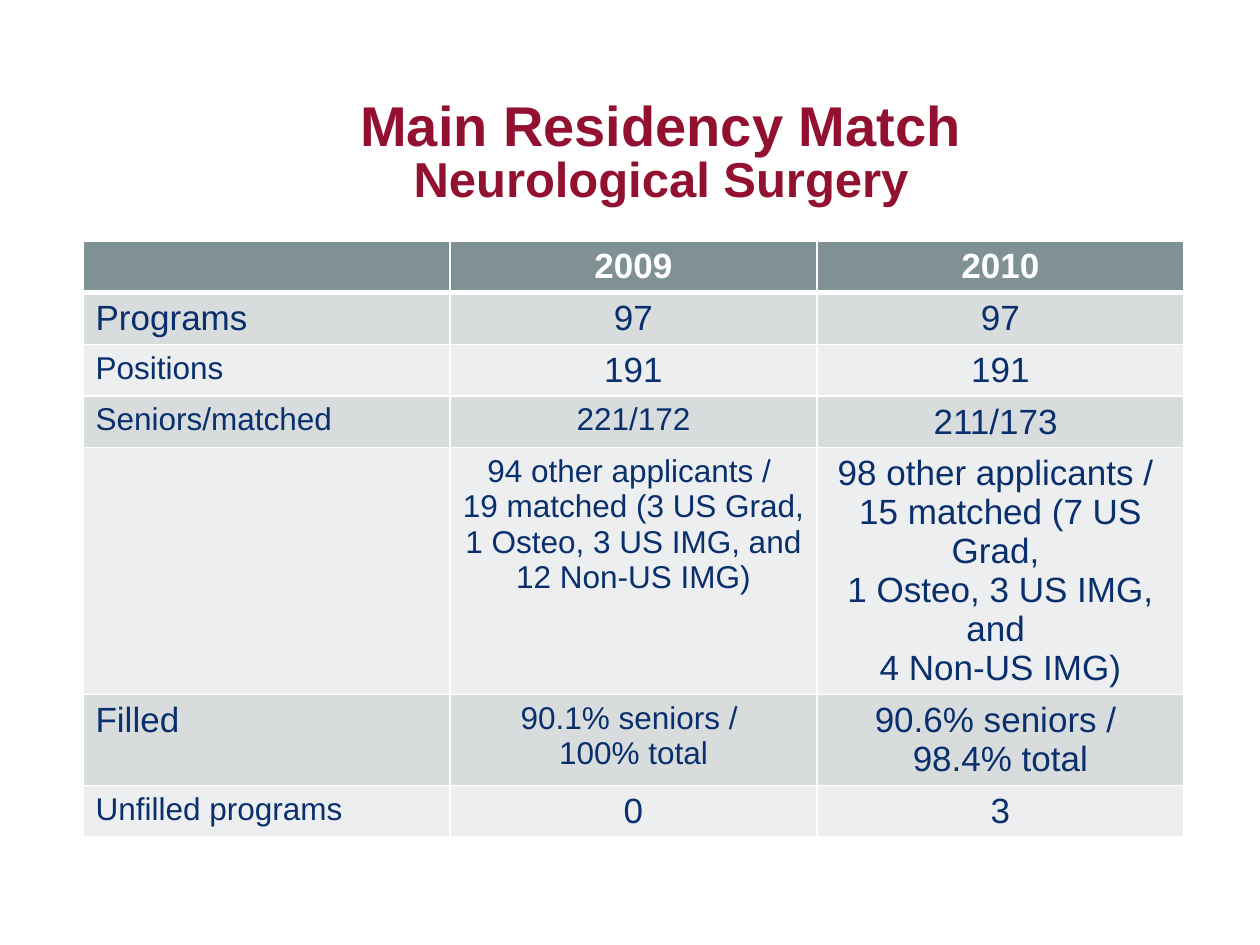
from pptx import Presentation
from pptx.dml.color import RGBColor
from pptx.enum.text import MSO_ANCHOR, MSO_AUTO_SIZE, PP_ALIGN
from pptx.oxml.ns import qn
from pptx.util import Pt
from lxml import etree

PX = 914400 // 126
LEFT, CENTER = PP_ALIGN.LEFT, PP_ALIGN.CENTER
BOTTOM, NO_FIT = MSO_ANCHOR.BOTTOM, MSO_AUTO_SIZE.NONE
FONT = "Arial"
TITLE_ONLY = 5

COLORS = {
    "title": "931130",
    "header": "809195",
    "band_dark": "D8DCDD",
    "band_light": "EDEEEF",
    "text": "092F6D",
    "white": "FFFFFF",
}

# Each cell is its text and its size in points.
ROWS = [
    [("", 20), ("2009", 20), ("2010", 20)],
    [("Programs", 20), ("97", 20), ("97", 20)],
    [("Positions", 18), ("191", 20), ("191", 20)],
    [("Seniors/matched", 18), ("221/172", 18), ("211/173 ", 20)],
    [("", 18),
     ("94 other applicants / \n19 matched (3 US Grad, \n"
      "1 Osteo, 3 US IMG, and 12 Non-US IMG)", 18),
     ("98 other applicants / \n15 matched (7 US Grad, \n"
      "1 Osteo, 3 US IMG, and \n4 Non-US IMG)", 20)],
    [("Filled", 20), ("90.1% seniors / \n100% total", 18),
     ("90.6% seniors / \n98.4% total", 20)],
    [("Unfilled programs", 18), ("0", 20), ("3", 20)],
]


def px(*values):
    return [v * PX for v in values]


def rgb(name):
    return RGBColor.from_string(COLORS[name])


def style_font(font, size, color, bold):
    font.name = FONT
    font.size = Pt(size)
    font.bold = bold
    font.color.rgb = rgb(color)


def add_title(s):
    title = s.shapes.title
    title.left, title.top, title.width, title.height = px(86, 82, 1150, 126)
    tf = title.text_frame
    tf.auto_size = NO_FIT
    tf.vertical_anchor = BOTTOM
    tf.margin_left = tf.margin_top = tf.margin_right = tf.margin_bottom = 0
    tf.text = "Main Residency Match\vNeurological Surgery"
    p = tf.paragraphs[0]
    p.alignment = CENTER
    p.line_spacing = 0.85
    for r, size in zip(p.runs, (32, 28)):
        style_font(r.font, size, "title", True)


def set_borders(cell, widths):
    """Draw white cell edges; widths maps L, R, T and B to points."""
    tc_pr = cell._tc.get_or_add_tcPr()
    for side, width in widths.items():
        ln = etree.SubElement(tc_pr, qn(f"a:ln{side}"), w=str(Pt(width)))
        fill = etree.SubElement(ln, qn("a:solidFill"))
        etree.SubElement(fill, qn("a:srgbClr"), val=COLORS["white"])


def fill_cell(cell, text, size, row, col):
    header = row == 0
    set_borders(cell, {"L": 1, "R": 1, "T": 3 if row == 1 else 1,
                       "B": 3 if header else 1})
    band = "band_dark" if row % 2 else "band_light"
    cell.fill.solid()
    cell.fill.fore_color.rgb = rgb("header" if header else band)
    cell.text_frame.text = text
    for p in cell.text_frame.paragraphs:
        p.alignment = CENTER if col else LEFT
        style_font(p.font, size, "white" if header else "text", header)
        for r in p.runs:
            style_font(r.font, size, "white" if header else "text", header)


def add_match_table(s):
    row_height, col_width = 51, 367
    n_rows, n_cols = len(ROWS), len(ROWS[0])
    frame = s.shapes.add_table(
        n_rows, n_cols,
        *px(83, 241, col_width * n_cols, row_height * n_rows))
    table = frame.table
    for i, row in enumerate(ROWS):
        for j, (text, size) in enumerate(row):
            fill_cell(table.cell(i, j), text, size, i, j)


def main():
    prs = Presentation()
    prs.slide_width, prs.slide_height = px(1260, 945)
    s = prs.slides.add_slide(prs.slide_layouts[TITLE_ONLY])
    add_title(s)
    add_match_table(s)
    prs.save("out.pptx")


if __name__ == "__main__":
    main()
